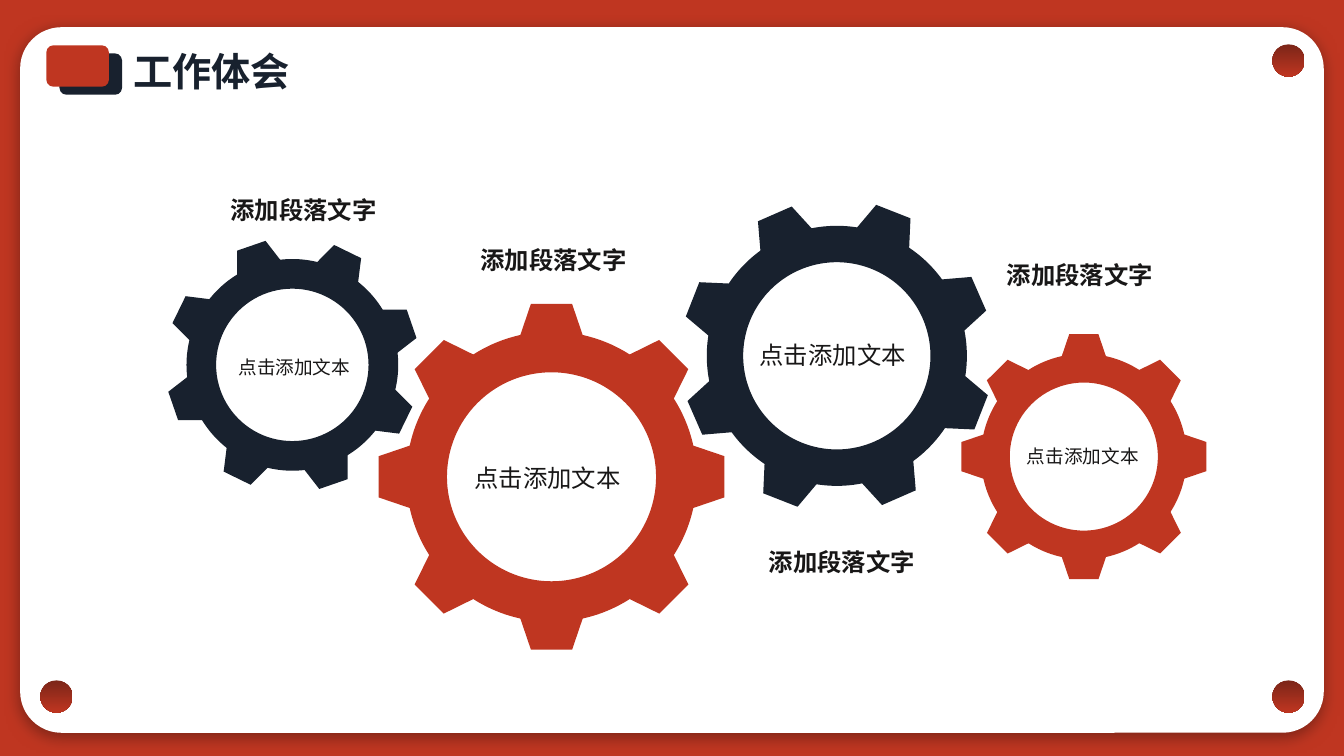
from math import cos, radians, sin

from lxml import etree
from pptx import Presentation
from pptx.dml.color import RGBColor
from pptx.enum.shapes import MSO_SHAPE as SHAPE
from pptx.enum.text import MSO_ANCHOR as ANCHOR, MSO_AUTO_SIZE as AUTO, PP_ALIGN as ALIGN
from pptx.oxml.ns import qn
from pptx.util import Inches, Pt

COLORS = {"red": "BF3621", "navy": "18212E", "white": "FFFFFF",
          "text": "181717", "shadow": "7B2518"}
FONT = "Noto Sans CJK SC"
TEETH = 8

# centre x, centre y, ring radius, rotation, colour, text size,
# centre of the inner text, centre of the heading
GEARS = [
    (2.9, 3.62, 1.05, -19, "navy", 13.3, (2.92, 3.64), (3.01, 2.08)),
    (5.47, 4.73, 1.44, 0, "red", 17.4, (5.43, 4.74), (5.49, 2.58)),
    (8.3, 3.53, 1.29, 21.4, "navy", 17.4, (8.26, 3.52), (8.35, 5.57)),
    (10.75, 4.53, 1.02, 0, "red", 13.3, (10.74, 4.52), (10.71, 2.73)),
]


def color(name):
    return RGBColor.from_string(COLORS[name])


def add_centered(slide, kind, cx, cy, width, height, name, adjustment=None):
    """Filled preset shape placed by its centre."""
    sp = slide.shapes.add_shape(kind, Inches(cx - width / 2), Inches(cy - height / 2),
                                Inches(width), Inches(height))
    sp.shadow.inherit = False
    sp.fill.solid()
    sp.fill.fore_color.rgb = color(name)
    sp.line.fill.background()
    if adjustment is not None:
        sp.adjustments[0] = adjustment
    return sp


def format_text(tf, text, size, name, bold=False, align=ALIGN.CENTER):
    tf.text = text
    tf.auto_size = AUTO.NONE
    tf.word_wrap = False
    tf.vertical_anchor = ANCHOR.MIDDLE
    p = tf.paragraphs[0]
    p.alignment = align
    r = p.runs[0]
    r.font.size = Pt(size)
    r.font.bold = bold
    r.font.name = FONT
    r.font.color.rgb = color(name)
    etree.SubElement(r.font._element, qn("a:ea"), typeface=FONT)


def add_label(slide, center, width, height, text, size, bold=False):
    cx, cy = center
    sp = slide.shapes.add_textbox(Inches(cx - width / 2), Inches(cy - height / 2),
                                  Inches(width), Inches(height))
    format_text(sp.text_frame, text, size, "text", bold)


def add_card(slide, left, top, width, height):
    """White rounded card with a soft shadow and three shaded holes."""
    right, bottom = left + width, top + height
    card = add_centered(slide, SHAPE.ROUNDED_RECTANGLE, left + width / 2,
                        top + height / 2, width, height, "white", 0.41 / height)
    effects = card._element.spPr.find(qn("a:effectLst"))
    shadow = etree.SubElement(effects, qn("a:outerShdw"), blurRad=str(Pt(11)),
                              dist=str(Pt(3)), dir="5400000", algn="t", rotWithShape="0")
    clr = etree.SubElement(shadow, qn("a:srgbClr"), val=COLORS["shadow"])
    etree.SubElement(clr, qn("a:alpha"), val="95000")

    for cx, cy in [(right - 0.35, top + 0.33), (left + 0.36, bottom - 0.36),
                   (right - 0.35, bottom - 0.36)]:
        hole = add_centered(slide, SHAPE.OVAL, cx, cy, 0.32, 0.32, "red")
        hole.fill.gradient()
        hole.fill.gradient_angle = 270
        for stop, name in zip(hole.fill.gradient_stops, ("shadow", "red")):
            stop.color.rgb = color(name)


def add_header(slide, left, top):
    """Two overlapping tabs and the slide title."""
    width, height = 0.62, 0.41
    for dx, dy, name in [(0.13, 0.08, "navy"), (0, 0, "red")]:
        add_centered(slide, SHAPE.ROUNDED_RECTANGLE, left + dx + width / 2,
                     top + dy + height / 2, width, height, name)
    title = slide.shapes.title
    title.left, title.top = Inches(left + 0.76), Inches(top - 0.03)
    title.width, title.height = Inches(1.83), Inches(0.57)
    format_text(title.text_frame, "工作体会", 28, "navy", True, ALIGN.LEFT)
    # Bring the title in front of the card
    slide.shapes.element.append(title.element)


def add_gear(slide, cx, cy, radius, rotation, name, size, text_center, heading_center):
    """Toothed ring, the text inside it and its heading."""
    add_centered(slide, SHAPE.DONUT, cx, cy, radius * 2, radius * 2, name, 0.14)
    reach = radius * 0.976
    for i in range(TEETH):
        turn = rotation + i * 360 / TEETH
        tooth = add_centered(slide, SHAPE.TRAPEZOID, cx + reach * sin(radians(turn)),
                             cy - reach * cos(radians(turn)),
                             radius * 0.576, radius * 0.43, name, 0.34)
        tooth.rotation = turn
    add_label(slide, text_center, 1.6, 1.23, "点击添加文本", size)
    add_label(slide, heading_center, 2.25, 0.63, "添加段落文字", 17.4, True)


def main():
    prs = Presentation()
    prs.slide_width, prs.slide_height = Inches(13.33), Inches(7.5)
    slide = prs.slides.add_slide(prs.slide_layouts[5])
    slide.background.fill.solid()
    slide.background.fill.fore_color.rgb = color("red")
    add_card(slide, 0.2, 0.27, 12.93, 7)
    add_header(slide, 0.46, 0.45)
    for gear in GEARS:
        add_gear(slide, *gear)
    prs.save("out.pptx")


if __name__ == "__main__":
    main()
